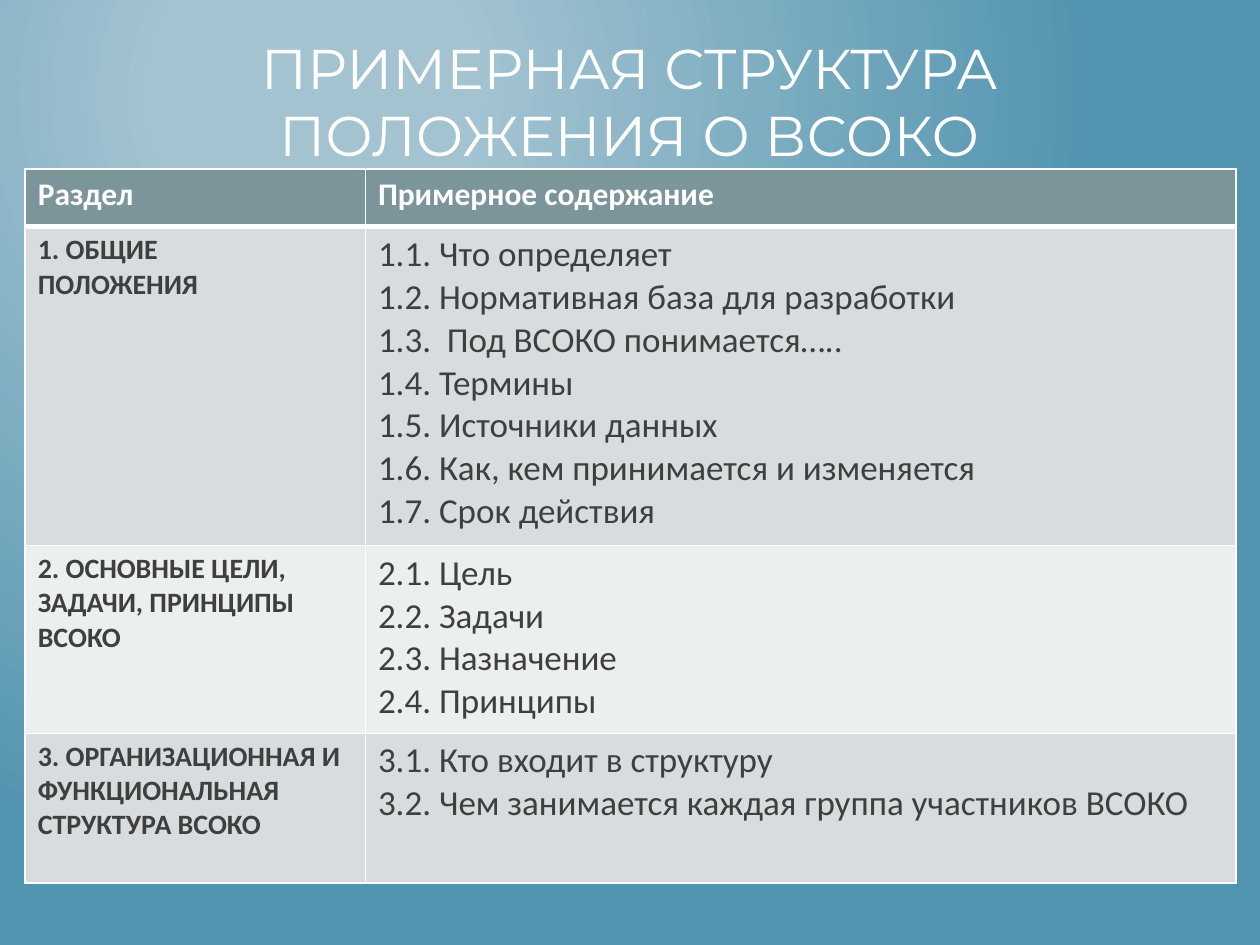
from lxml import etree
from pptx import Presentation
from pptx import util as u
from pptx.dml.color import RGBColor
from pptx.enum import text
from pptx.oxml.ns import qn

COLORS = {
    "glow": "A3C3D1", "edge": "5194AF", "white": "FFFFFF", "ink": "3F3F3F",
    "header": "7C959A", "odd": "D7DDDE", "even": "ECEFEF",
}
HEADINGS = ["Раздел", "Примерное содержание"]
SECTIONS = [
    (["1. ОБЩИЕ", "ПОЛОЖЕНИЯ"],
     ["1.1. Что определяет", "1.2. Нормативная база для разработки",
      "1.3.  Под ВСОКО понимается…..", "1.4. Термины", "1.5. Источники данных",
      "1.6. Как, кем принимается и изменяется", "1.7. Срок действия"]),
    (["2. ОСНОВНЫЕ ЦЕЛИ,", "ЗАДАЧИ, ПРИНЦИПЫ", "ВСОКО"],
     ["2.1. Цель", "2.2. Задачи", "2.3. Назначение", "2.4. Принципы"]),
    (["3. ОРГАНИЗАЦИОННАЯ И ФУНКЦИОНАЛЬНАЯ", "СТРУКТУРА ВСОКО"],
     ["3.1. Кто входит в структуру",
      "3.2. Чем занимается каждая группа участников ВСОКО"]),
]
COLUMN_WIDTHS = [2.7, 6.91]
ROW_HEIGHTS = [0.46, 2.53, 1.49, 1.19]


def write_lines(frame, lines, size, color, font="Calibri", bold=False):
    """Write each line as a paragraph of one run."""
    for index, line in enumerate(lines):
        paragraph = frame.paragraphs[0] if index == 0 else frame.add_paragraph()
        run = paragraph.add_run()
        run.text = line
        run.font.name = font
        run.font.size = u.Pt(size)
        run.font.bold = bold
        run.font.color.rgb = RGBColor.from_string(COLORS[color])


def set_borders(cell, widths):
    """Draw white cell borders; widths maps a side (L, R, T, B) to points."""
    properties = cell._tc.get_or_add_tcPr()
    for position, (side, width) in enumerate(widths.items()):
        line = etree.Element(qn(f"a:ln{side}"), w=str(u.Pt(width)))
        fill = etree.SubElement(line, qn("a:solidFill"))
        etree.SubElement(fill, qn("a:srgbClr"), val=COLORS["white"])
        properties.insert(position, line)


presentation = Presentation()
presentation.slide_width, presentation.slide_height = u.Inches(10), u.Inches(7.5)
slide = presentation.slides.add_slide(presentation.slide_layouts[6])

# Background: a circular glow at the upper left
background = slide.background.fill
background.gradient()
for stop, color, position in zip(background.gradient_stops, ["glow", "edge"], [0.2, 1]):
    stop.color.rgb = RGBColor.from_string(COLORS[color])
    stop.position = position
gradient = slide.element.find(".//" + qn("a:gradFill"))
gradient.remove(gradient.find(qn("a:lin")))
glow = etree.SubElement(gradient, qn("a:path"), path="circle")
etree.SubElement(glow, qn("a:fillToRect"), l="50000", t="20000", r="100000", b="100000")

# Title
title = slide.shapes.add_textbox(u.Inches(0.35), u.Inches(0.21), u.Inches(9.29), u.Inches(1.18))
title.text_frame.word_wrap = True
title.text_frame.vertical_anchor = text.MSO_ANCHOR.MIDDLE
write_lines(title.text_frame, ["ПРИМЕРНАЯ СТРУКТУРА ПОЛОЖЕНИЯ О ВСОКО"], 32, "white", "Montserrat")
title.text_frame.paragraphs[0].alignment = text.PP_ALIGN.CENTER

# Table of sections
table = slide.shapes.add_table(
    len(ROW_HEIGHTS), len(COLUMN_WIDTHS), u.Inches(0.2), u.Inches(1.34),
    u.Inches(sum(COLUMN_WIDTHS)), u.Inches(sum(ROW_HEIGHTS))).table
for column, width in zip(table.columns, COLUMN_WIDTHS):
    column.width = u.Inches(width)
for row, height in zip(table.rows, ROW_HEIGHTS):
    row.height = u.Inches(height)

for column_index, heading in enumerate(HEADINGS):
    write_lines(table.cell(0, column_index).text_frame, [heading], 18, "white", bold=True)
for row_index, (name, contents) in enumerate(SECTIONS, start=1):
    write_lines(table.cell(row_index, 0).text_frame, name, 16, "ink", bold=True)
    write_lines(table.cell(row_index, 1).text_frame, contents, 20, "ink")

for row_index, row in enumerate(table.rows):
    shade = "header" if row_index == 0 else "odd" if row_index % 2 else "even"
    for cell in row.cells:
        cell.fill.solid()
        cell.fill.fore_color.rgb = RGBColor.from_string(COLORS[shade])
        set_borders(cell, {"L": 1, "R": 1, "T": 3 if row_index == 1 else 1,
                           "B": 3 if row_index == 0 else 1})

presentation.save("out.pptx")
